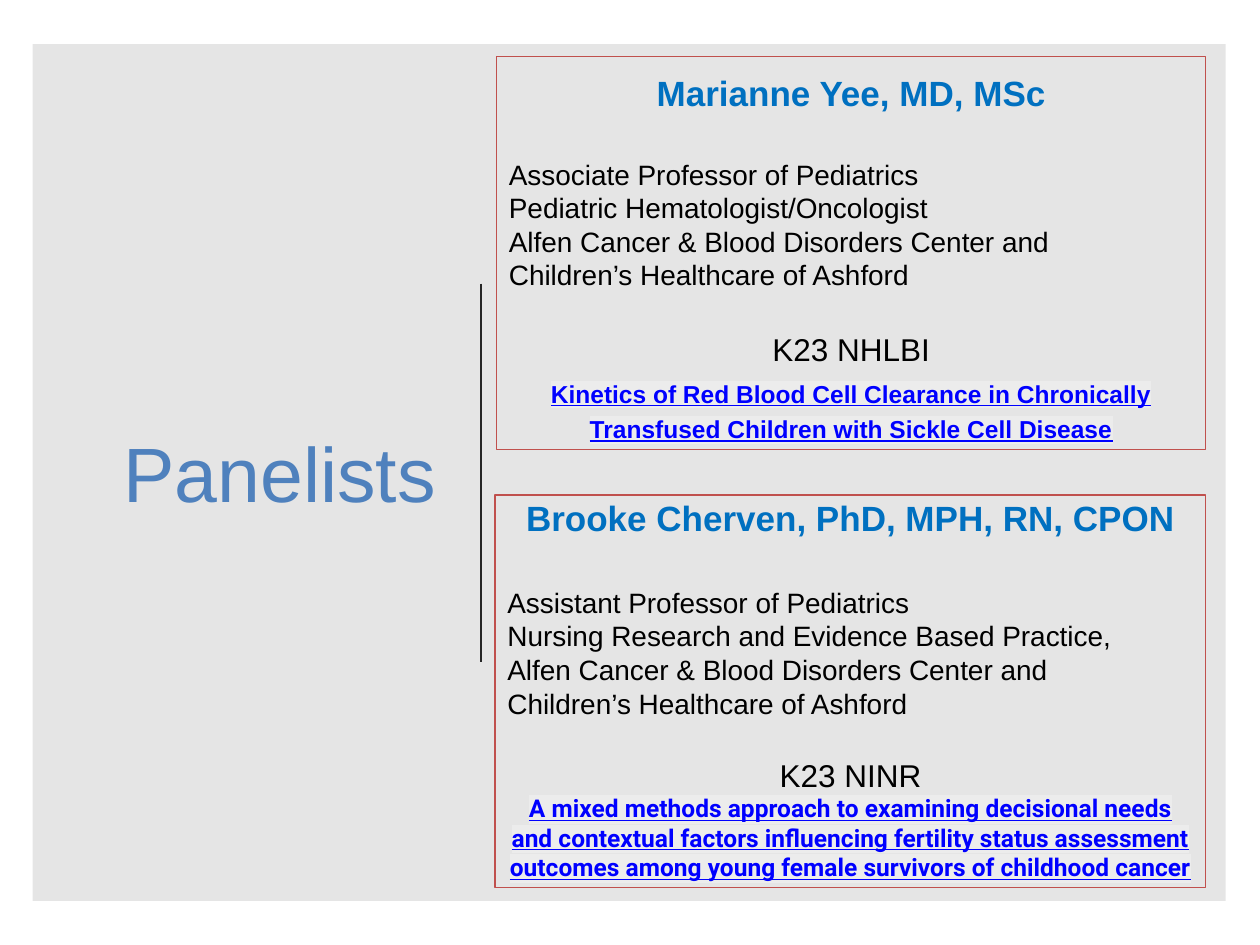
from dataclasses import dataclass

from lxml.etree import SubElement
from pptx import Presentation
from pptx.dml.color import RGBColor
from pptx.enum.shapes import MSO_CONNECTOR, MSO_SHAPE
from pptx.enum.text import MSO_ANCHOR, PP_ALIGN
from pptx.oxml.ns import qn
from pptx.util import Cm, Pt


@dataclass(frozen=True)
class Theme:
    font: str = "Arial"
    alt: str = "Roboto"
    panel: str = "000000"
    title: str = "4F81BD"
    rule: str = "262626"
    edge: str = "C0504D"
    name: str = "0070C0"
    body: str = "000000"
    link: str = "0000FF"
    mark: str = "ECECEC"
    title_size: int = 44
    name_size: int = 20
    grant_size: int = 18
    body_size: int = 16
    link_size: int = 14


class Deck:
    def __init__(self, theme):
        self.theme = theme
        self.prs = Presentation()
        self.prs.slide_width, self.prs.slide_height = Cm(25.4), Cm(19.05)
        self.slide = self.prs.slides.add_slide(self.prs.slide_layouts[6])

    def rect(self, *at):
        shape = self.slide.shapes.add_shape(
            MSO_SHAPE.RECTANGLE, *(Cm(n) for n in at))
        shape.shadow.inherit = False
        return shape

    def panel(self, *at):
        shape = self.rect(*at)
        shape.fill.solid()
        shape.fill.fore_color.rgb = RGBColor.from_string(self.theme.panel)
        color = shape.fill._xPr.find(qn("a:solidFill"))[0]
        SubElement(color, qn("a:alpha"), val="10000")
        shape.line.fill.background()

    def frame(self, *at, anchor):
        shape = self.rect(*at)
        shape.fill.background()
        shape.line.color.rgb = RGBColor.from_string(self.theme.edge)
        shape.line.width = Pt(0.75)
        text = shape.text_frame
        text.word_wrap = True
        text.vertical_anchor = anchor
        return text

    def rule(self, x, top, end):
        line = self.slide.shapes.add_connector(
            MSO_CONNECTOR.STRAIGHT, Cm(x), Cm(top), Cm(x), Cm(end))
        line.line.color.rgb = RGBColor.from_string(self.theme.rule)
        line.line.width = Pt(1.5)
        SubElement(line._element.spPr, qn("a:effectLst"))

    def run(self, para, words, size, color, bold=False, font=None):
        run = para.add_run()
        run.text = words
        run.font.name = font or self.theme.font
        run.font.size = Pt(size)
        run.font.bold = bold
        run.font.color.rgb = RGBColor.from_string(color)
        return run

    def link(self, para, words, font):
        run = self.run(para, words, self.theme.link_size, self.theme.link,
                       True, font)
        run.font.underline = True
        fill = run.font._element.find(qn("a:solidFill"))
        mark = SubElement(run.font._element, qn("a:highlight"))
        SubElement(mark, qn("a:srgbClr"), val=self.theme.mark)
        fill.addnext(mark)

    def para(self, text, align=PP_ALIGN.CENTER, before=0, pitch=1.0):
        first = text.paragraphs[0]
        para = text.add_paragraph() if first.runs else first
        para.alignment = align
        para.space_before = Pt(before)
        para.line_spacing = pitch
        return para

    def title(self, words, *at):
        box = self.slide.shapes.add_textbox(*(Cm(n) for n in at))
        text = box.text_frame
        text.word_wrap = True
        text.vertical_anchor = MSO_ANCHOR.MIDDLE
        self.run(self.para(text, PP_ALIGN.RIGHT), words,
                 self.theme.title_size, self.theme.title)

    def card(self, at, anchor, name, posts, grant, study, gaps,
             pitch=1.0, lead=0, font=None):
        look = self.theme
        text = self.frame(*at, anchor=anchor)
        self.run(self.para(text, pitch=0.9), name,
                 look.name_size, look.name, True)
        for i, post in enumerate(posts):
            para = self.para(text, PP_ALIGN.LEFT, 0 if i else gaps[0])
            self.run(para, post, look.body_size, look.body)
        self.run(self.para(text, before=gaps[1]), grant,
                 look.grant_size, look.body)
        self.link(self.para(text, before=lead, pitch=pitch), study, font)


def main():
    deck = Deck(Theme())

    # Backdrop, title and divider
    deck.panel(0.66, 0.89, 24.05, 17.27)
    deck.title("Panelists", 1.75, 2.67, 7.29, 13.68)
    deck.rule(9.7, 5.72, 13.34)

    # Panelist cards
    shared = ["Alfen Cancer & Blood Disorders Center and",
              "Children’s Healthcare of Ashford"]
    deck.card(
        (10.01, 1.14, 14.3, 7.92), MSO_ANCHOR.BOTTOM,
        "Marianne Yee, MD, MSc",
        ["Associate Professor of Pediatrics",
         "Pediatric Hematologist/Oncologist"] + shared,
        "K23 NHLBI",
        "Kinetics of Red Blood Cell Clearance in Chronically "
        "Transfused Children with Sickle Cell Disease",
        gaps=(24.5, 22), pitch=1.2, lead=2.8)
    deck.card(
        (9.98, 9.98, 14.33, 7.92), MSO_ANCHOR.TOP,
        "Brooke Cherven, PhD, MPH, RN, CPON",
        ["Assistant Professor of Pediatrics",
         "Nursing Research and Evidence Based Practice,"] + shared,
        "K23 NINR",
        "A mixed methods approach to examining decisional needs and "
        "contextual factors influencing fertility status assessment "
        "outcomes among young female survivors of childhood cancer",
        gaps=(26.5, 20.5), font=deck.theme.alt)

    deck.prs.save("out.pptx")


if __name__ == "__main__":
    main()
